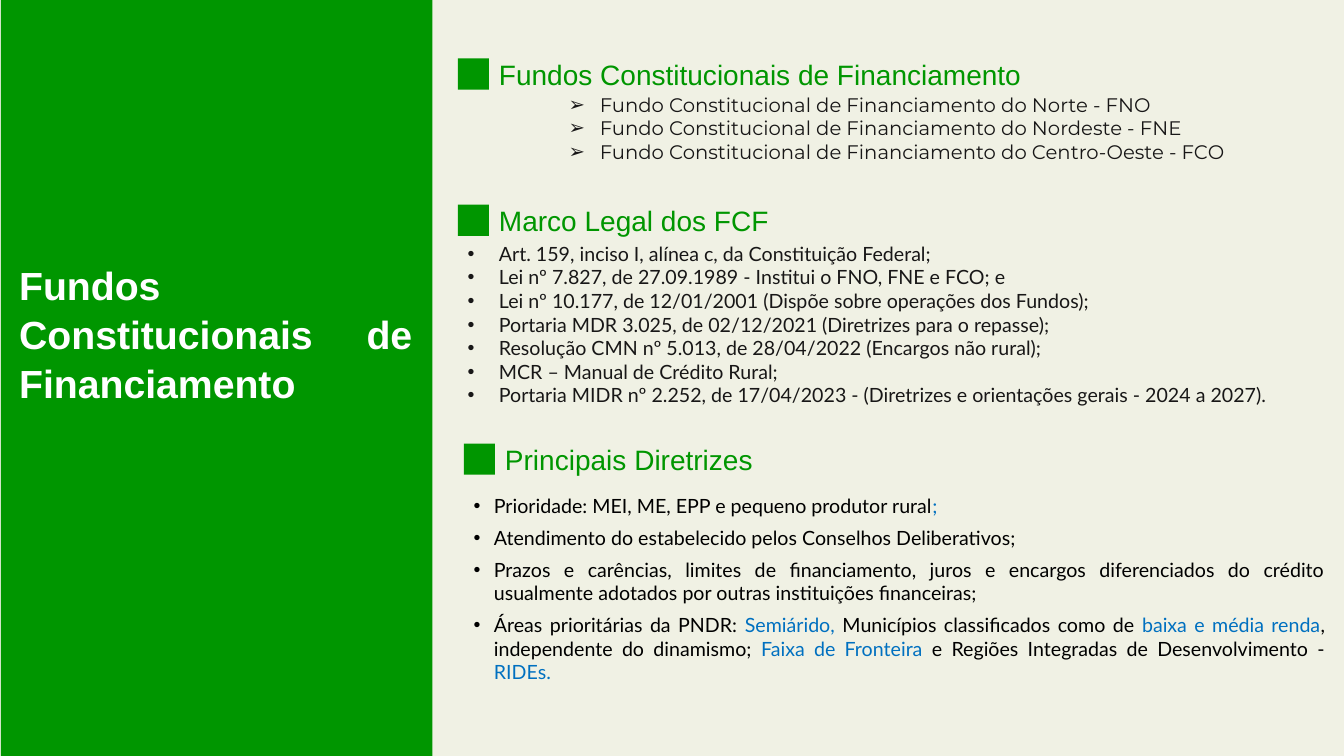
from lxml import etree
from pptx import Presentation
from pptx.dml.color import RGBColor
from pptx.enum.shapes import MSO_SHAPE
from pptx.enum.text import MSO_ANCHOR, MSO_AUTO_SIZE, PP_ALIGN
from pptx.oxml.ns import qn
from pptx.util import Inches, Pt

RECTANGLE = MSO_SHAPE.RECTANGLE
TOP = MSO_ANCHOR.TOP
GROW = MSO_AUTO_SIZE.SHAPE_TO_FIT_TEXT
NO_FIT = MSO_AUTO_SIZE.NONE
LEFT, JUSTIFY = PP_ALIGN.LEFT, PP_ALIGN.JUSTIFY

GREEN, CREAM, WHITE = "009600", "F0F1E4", "FFFFFF"
CHARCOAL, BLACK, BLUE = "181717", "000000", "0070C0"
TITLE = "Fundos Constitucionais de Financiamento"

# Text between vertical bars is highlighted in blue.
SECTIONS = [
    {
        "heading": "Fundos Constitucionais de Financiamento",
        "box": (4.54, 0.52),
        "body": (0.35, 7.82, 0.81),
        "items": [
            "Fundo Constitucional de Financiamento do Norte - FNO",
            "Fundo Constitucional de Financiamento do Nordeste - FNE",
            "Fundo Constitucional de Financiamento do Centro-Oeste - FCO",
        ],
        "bullet": ("➢", 1.31, 0.31),
        "font": ("Montserrat", CHARCOAL),
        "paragraph": {"level": 2, "alignment": LEFT},
    },
    {
        "heading": "Marco Legal dos FCF",
        "box": (4.54, 1.97),
        "body": (0.38, 8.7, 1.75),
        "items": [
            "Art. 159, inciso I, alínea c, da Constituição Federal;",
            "Lei nº 7.827, de 27.09.1989 - Institui o FNO, FNE e FCO; e",
            "Lei nº 10.177, de 12/01/2001 (Dispõe sobre operações dos Fundos);",
            "Portaria MDR 3.025, de 02/12/2021 (Diretrizes para o repasse);",
            "Resolução CMN nº 5.013, de 28/04/2022 (Encargos não rural);",
            "MCR – Manual de Crédito Rural;",
            "Portaria MIDR nº 2.252, de 17/04/2023 - "
            "(Diretrizes e orientações gerais - 2024 a 2027).",
        ],
        "bullet": ("•", 0.31, 0.31),
        "font": ("Lato", CHARCOAL),
        "paragraph": {"alignment": JUSTIFY},
    },
    {
        "heading": "Principais Diretrizes",
        "box": (4.6, 4.34),
        "body": (0.51, 8.64, 1.77),
        "items": [
            "Prioridade: MEI, ME, EPP e pequeno produtor rural|;",
            "Atendimento do estabelecido pelos Conselhos Deliberativos;",
            "Prazos e carências, limites de financiamento, juros e encargos "
            "diferenciados do crédito usualmente adotados por outras "
            "instituições financeiras;",
            "Áreas prioritárias da PNDR:| Semiárido, |Municípios classificados "
            "como de |baixa e média renda|, independente do dinamismo; "
            "|Faixa de Fronteira |e Regiões Integradas de Desenvolvimento - "
            "|RIDEs.",
        ],
        "bullet": ("•", 0.2, 0.2),
        "font": ("Lato", BLACK),
        "paragraph": {"alignment": JUSTIFY, "space_after": Pt(6)},
    },
]


def rgb(color):
    return RGBColor.from_string(color)


def apply(target, settings):
    for attribute, value in settings.items():
        setattr(target, attribute, value)


def style_font(font, name, size, color, bold=False):
    apply(font, {"name": name, "size": Pt(size), "bold": bold})
    font.color.rgb = rgb(color)


def add_block(slide, left, top, width, height):
    block = slide.shapes.add_shape(
        RECTANGLE, Inches(left), Inches(top), Inches(width), Inches(height))
    block.shadow.inherit = False
    block.fill.solid()
    block.fill.fore_color.rgb = rgb(GREEN)
    block.line.fill.background()


def add_text_frame(slide, left, top, width, height):
    frame = slide.shapes.add_textbox(
        Inches(left), Inches(top), Inches(width), Inches(height)).text_frame
    apply(frame, {"word_wrap": True, "auto_size": GROW})
    return frame


def add_bullet(paragraph, symbol, margin, hanging):
    properties = paragraph._p.get_or_add_pPr()
    properties.set("marL", str(Inches(margin)))
    properties.set("indent", str(-Inches(hanging)))
    etree.SubElement(properties, qn("a:buFont")).set("typeface", "Arial")
    etree.SubElement(properties, qn("a:buChar")).set("char", symbol)


def add_title_panel(slide, left, top, width, height):
    add_block(slide, left, top, width, height)
    title = slide.shapes.title
    apply(title, {"left": Inches(left + 0.08), "top": Inches(top + 2.52),
                  "width": Inches(width - 0.18), "height": Inches(1.51)})
    slide.shapes._spTree.append(title._element)  # bring in front of the panel
    frame = title.text_frame
    frame.text = TITLE
    apply(frame, {"word_wrap": True, "auto_size": NO_FIT,
                  "vertical_anchor": TOP})
    paragraph = frame.paragraphs[0]
    apply(paragraph, {"alignment": JUSTIFY, "line_spacing": 1.04})
    style_font(paragraph.runs[0].font, "Arial", 28, WHITE, bold=True)


def add_section(slide, section):
    left, top = section["box"]
    marker = 0.31
    add_block(slide, left, top + 0.06, marker, marker)

    heading = add_text_frame(slide, left + marker, top, 7.45, 0.44)
    heading.text = section["heading"]
    style_font(heading.paragraphs[0].runs[0].font, "Arial", 20, GREEN)

    offset, width, height = section["body"]
    body = add_text_frame(slide, left, top + offset, width, height)
    font_name, color = section["font"]
    for index, item in enumerate(section["items"]):
        paragraph = body.add_paragraph() if index else body.paragraphs[0]
        add_bullet(paragraph, *section["bullet"])
        apply(paragraph, section["paragraph"])
        for part, words in enumerate(item.split("|")):
            run = paragraph.add_run()
            run.text = words
            style_font(run.font, font_name, 14, BLUE if part % 2 else color)


def main():
    presentation = Presentation()
    apply(presentation, {"slide_width": Inches(13.33),
                         "slide_height": Inches(7.5)})
    slide = presentation.slides.add_slide(presentation.slide_layouts[5])
    slide.background.fill.solid()
    slide.background.fill.fore_color.rgb = rgb(CREAM)
    add_title_panel(slide, 0.01, 0, 4.28, 7.5)
    for section in SECTIONS:
        add_section(slide, section)
    presentation.save("out.pptx")


if __name__ == "__main__":
    main()
